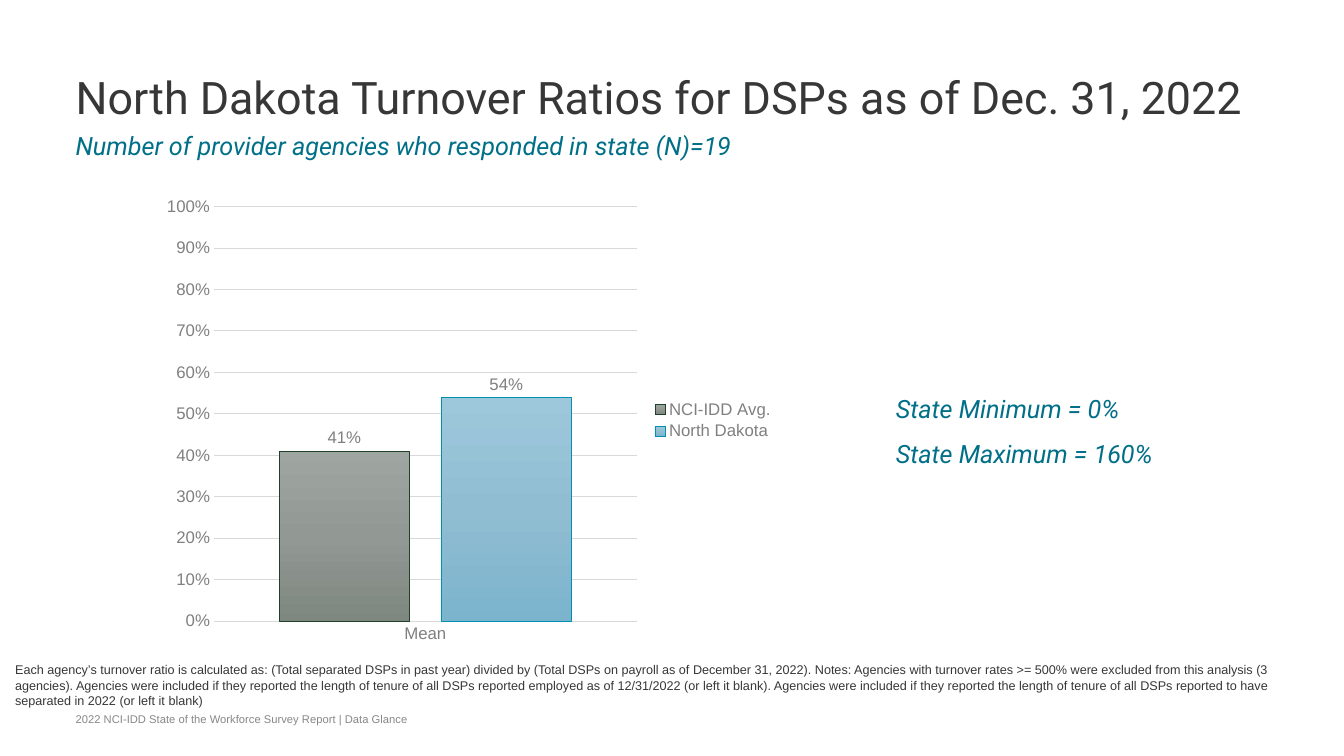
from copy import deepcopy
from dataclasses import dataclass

from lxml.etree import SubElement
from pptx import Presentation
from pptx.chart.data import CategoryChartData
from pptx.dml.color import RGBColor
from pptx.enum.chart import XL_CHART_TYPE as ChartType
from pptx.enum.chart import XL_LABEL_POSITION as LabelPosition
from pptx.enum.chart import XL_LEGEND_POSITION as LegendPosition
from pptx.enum.chart import XL_TICK_MARK as TickMark
from pptx.enum.text import MSO_ANCHOR as Anchor
from pptx.oxml.ns import qn
from pptx.util import Inches, Pt


@dataclass(frozen=True)
class Theme:
    """Colours, fonts and type sizes of the slide."""
    ink: str = "373737"
    accent: str = "006F88"
    footer: str = "878787"
    chart_text: str = "808080"
    rule: str = "D9D9D9"
    display: str = "Roboto"
    body: str = "Arial"
    title_size: int = 32
    lead_size: int = 18
    chart_size: int = 12
    note_size: int = 9
    footer_size: int = 8
    line_width: float = 0.75


THEME = Theme()
WIDTH, HEIGHT = 13.33, 7.5
MARGIN = 0.75

TURNOVER = [
    ("NCI-IDD Avg. ", 0.41, ("9FA5A0", "929893", "7E8780"), "1F4029"),
    ("North Dakota", 0.54, ("9DC8DC", "90BDD2", "7CB4CD"), "0091B1"),
]
METHOD_NOTE = (
    "Each agency’s turnover ratio is calculated as: (Total separated DSPs in past year) "
    "divided by (Total DSPs on payroll as of December 31, 2022). Notes: Agencies with "
    "turnover rates >= 500% were excluded from this analysis (3 agencies). Agencies were "
    "included if they reported the length of tenure of all DSPs reported employed as of "
    "12/31/2022 (or left it blank). Agencies were included if they reported the length of "
    "tenure of all DSPs reported to have separated in 2022 (or left it blank)"
)


def rgb(code):
    """Turn a hex code into a colour."""
    return RGBColor.from_string(code)


def style_font(font, size, color, name=THEME.body, italic=False):
    """Apply face, size and colour to a font."""
    font.name, font.size, font.italic = name, Pt(size), italic
    font.color.rgb = rgb(color)


def add_text(slide, box, text, spacing=1.0, anchor=Anchor.TOP, **look):
    """Write text, one paragraph per line, in a box without insets."""
    frame = slide.shapes.add_textbox(*map(Inches, box)).text_frame
    frame.word_wrap = True
    frame.vertical_anchor = anchor
    frame.margin_left = frame.margin_right = frame.margin_top = frame.margin_bottom = 0
    frame.text = text
    for paragraph in frame.paragraphs:
        paragraph.line_spacing = spacing
        for run in paragraph.runs:
            style_font(run.font, **look)


def add_heading(slide, box):
    """Place the title and the sample size under it."""
    left, top, width, height = box
    add_text(slide, (left, top, width, 0.69),
             "North Dakota Turnover Ratios for DSPs as of Dec. 31, 2022",
             spacing=0.9, size=THEME.title_size, color=THEME.ink, name=THEME.display)
    add_text(slide, (left, top + height - 0.45, width, 0.45),
             "Number of provider agencies who responded in state (N)=19",
             spacing=0.9, size=THEME.lead_size, color=THEME.accent,
             name=THEME.display, italic=True)


def style_bar(series, stops, outline):
    """Give a series its vertical gradient, outline and value label."""
    fill = series.format.fill
    fill.gradient()
    fill.gradient_angle = 270
    stop_list = next(series.format.fill._xPr.iter(qn("a:gsLst")))
    stop_list.insert(1, deepcopy(stop_list[0]))
    for index, (stop, color) in enumerate(zip(fill.gradient_stops, stops)):
        stop.position = index / (len(stops) - 1)
        stop.color.rgb = rgb(color)
    series.invert_if_negative = False
    series.format.line.color.rgb = rgb(outline)
    series.format.line.width = Pt(THEME.line_width)
    labels = series.data_labels
    labels.show_value = True
    labels.position = LabelPosition.OUTSIDE_END
    labels.number_format, labels.number_format_is_linked = "0%", False
    style_font(labels.font, THEME.chart_size, THEME.chart_text)


def style_axes(chart):
    """Set scale, gridlines and labels of both axes."""
    for axis in (chart.category_axis, chart.value_axis):
        axis.major_tick_mark = axis.minor_tick_mark = TickMark.NONE
        style_font(axis.tick_labels.font, THEME.chart_size, THEME.chart_text)
    ratio = chart.value_axis
    ratio.minimum_scale, ratio.maximum_scale, ratio.major_unit = 0, 1, 0.1
    ratio.tick_labels.number_format = "0%"
    ratio.tick_labels.number_format_is_linked = False
    ratio.format.line.fill.background()
    for line in (ratio.major_gridlines.format.line, chart.category_axis.format.line):
        line.color.rgb = rgb(THEME.rule)
        line.width = Pt(THEME.line_width)


def add_turnover_chart(slide, box):
    """Compare the mean turnover ratios as columns."""
    data = CategoryChartData(number_format="0%")
    data.categories = ["Mean"]
    for name, ratio, _, _ in TURNOVER:
        data.add_series(name, [ratio])
    chart = slide.shapes.add_chart(
        ChartType.COLUMN_CLUSTERED, *map(Inches, box), data).chart
    chart.has_title = False
    style_font(chart.font, THEME.chart_size, THEME.chart_text)
    chart.has_legend = True
    chart.legend.position = LegendPosition.RIGHT
    chart.legend.include_in_layout = False
    style_font(chart.legend.font, THEME.chart_size, THEME.chart_text)
    plot = chart.plots[0]
    plot.gap_width, plot.overlap, plot.vary_by_categories = 100, -24, False
    for series, (_, _, stops, outline) in zip(plot.series, TURNOVER):
        style_bar(series, stops, outline)
    style_axes(chart)


def add_state_range(slide, box):
    """State the lowest and highest ratio."""
    add_text(slide, box, "State Minimum = 0%\nState Maximum = 160%", spacing=1.5,
             size=THEME.lead_size, color=THEME.accent, name=THEME.display, italic=True)


def add_notes_and_footer(slide, box):
    """Place the method note and the report line below it."""
    left, top, width, height = box
    add_text(slide, (left, top, width, 0.53), METHOD_NOTE,
             size=THEME.note_size, color=THEME.ink)
    add_text(slide, (MARGIN, top + height - 0.15, 7.86, 0.15),
             "2022 NCI-IDD State of the Workforce Survey Report | Data Glance",
             anchor=Anchor.BOTTOM, size=THEME.footer_size, color=THEME.footer)


def main():
    """Build and save the slide."""
    deck = Presentation()
    deck.slide_width, deck.slide_height = Inches(WIDTH), Inches(HEIGHT)
    slide = deck.slides.add_slide(deck.slide_layouts[6])
    add_heading(slide, (MARGIN, MARGIN, WIDTH - 2 * MARGIN, 1.03))
    add_turnover_chart(slide, (1.53, 1.87, 6.3, 4.6))
    add_state_range(slide, (WIDTH * 2 / 3, HEIGHT / 2, 2.73, 0.84))
    add_notes_and_footer(slide, (0.15, 6.57, 12.95, 0.63))
    deck.save("out.pptx")


if __name__ == "__main__":
    main()
